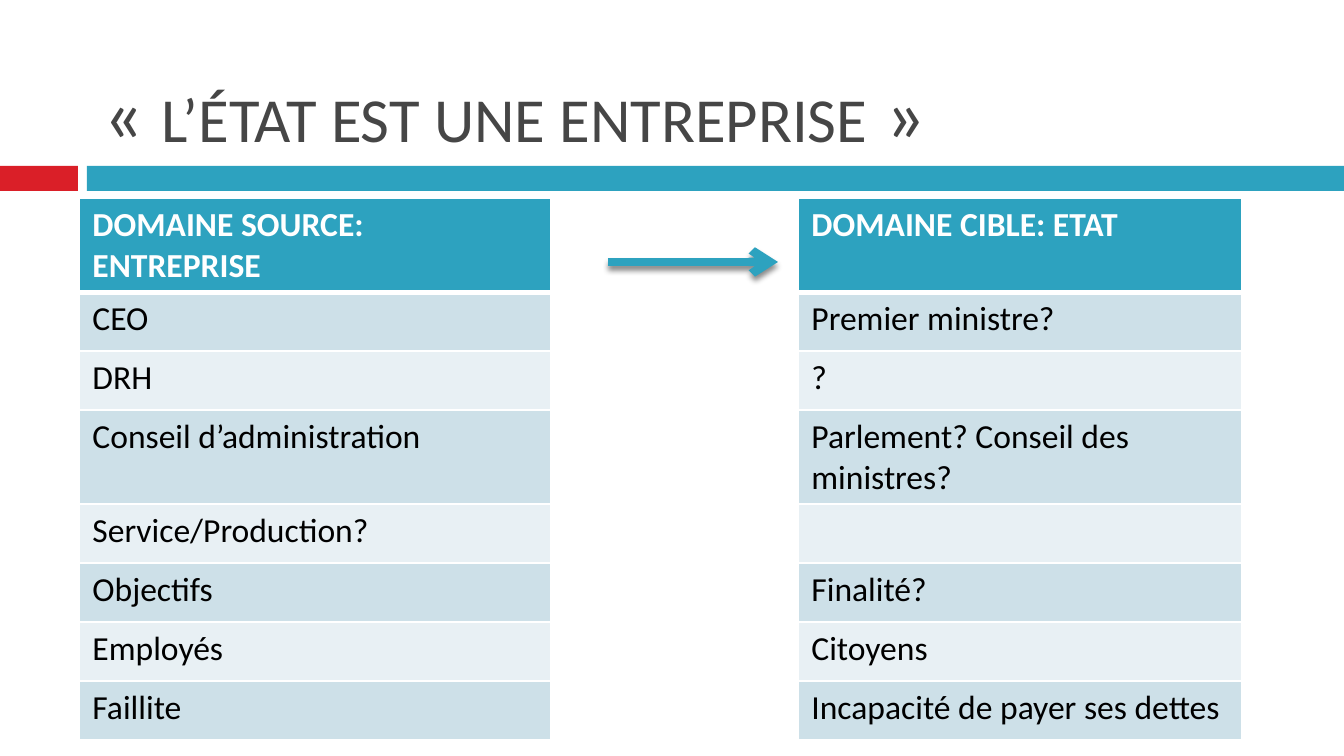
from dataclasses import dataclass

from lxml.etree import SubElement
from pptx import Presentation
from pptx.dml.color import RGBColor
from pptx.enum.shapes import MSO_CONNECTOR, MSO_SHAPE
from pptx.enum.text import MSO_ANCHOR
from pptx.oxml.ns import qn
from pptx.util import Emu, Pt

PX = 914400 / 134.4
COLORS = {
    "red": "DA1F28",
    "teal": "2DA2BF",
    "title": "464646",
    "white": "FFFFFF",
    "black": "000000",
    "band_dark": "CDE0E8",
    "band_light": "E8F0F4",
}


@dataclass(frozen=True)
class Bar:
    left: int
    width: int
    color: str


@dataclass(frozen=True)
class Mapping:
    source: str
    target: str
    height: int = 59


BARS = [Bar(0, 78, "red"), Bar(87, 1257, "teal")]
COLUMNS = [472, 247, 444]
MAPPINGS = [
    Mapping("DOMAINE SOURCE: ENTREPRISE", "DOMAINE CIBLE: ETAT", 94),
    Mapping("CEO", "Premier ministre?"),
    Mapping("DRH", "?"),
    Mapping("Conseil d’administration", "Parlement? Conseil des ministres?", 94),
    Mapping("Service/Production?", ""),
    Mapping("Objectifs", "Finalité?"),
    Mapping("Employés", "Citoyens"),
    Mapping("Faillite", "Incapacité de payer ses dettes"),
]


def px(length: int) -> Emu:
    return Emu(round(length * PX))


def rgb(name: str) -> RGBColor:
    return RGBColor.from_string(COLORS[name])


def add_text(para, text: str, *, size: int = 18, color: str = "black",
             bold: bool = False, small_caps: bool = False) -> None:
    span = para.add_run()
    span.text = text
    span.font.name = "Calibri"
    span.font.size = Pt(size)
    span.font.bold = bold
    span.font.color.rgb = rgb(color)
    if small_caps:
        span.font._element.set("cap", "small")


def draw_bar(page, bar: Bar) -> None:
    box = page.shapes.add_shape(MSO_SHAPE.RECTANGLE, px(bar.left), px(166), px(bar.width), px(25))
    box.shadow.inherit = False
    box.fill.solid()
    box.fill.fore_color.rgb = rgb(bar.color)
    box.line.fill.background()


def draw_title(page) -> None:
    box = page.shapes.add_textbox(px(90), px(17), px(1198), px(148))
    frame = box.text_frame
    frame.word_wrap = True
    frame.vertical_anchor = MSO_ANCHOR.BOTTOM
    para = frame.paragraphs[0]
    add_text(para, "« ", size=42, color="title")
    add_text(para, "l’état est une entreprise", size=42, color="title", small_caps=True)
    add_text(para, " »", size=42, color="title")


def set_borders(cell, bottom: int) -> None:
    properties = cell._tc.get_or_add_tcPr()
    widths = {"lnL": 1, "lnR": 1, "lnT": 1, "lnB": bottom}
    for position, (side, width) in enumerate(widths.items()):
        line = SubElement(properties, qn(f"a:{side}"), w=str(Pt(width)))
        fill = SubElement(line, qn("a:solidFill"))
        SubElement(fill, qn("a:srgbClr"), val=COLORS["white"])
        properties.insert(position, line)


def draw_table(page, mappings: list[Mapping]) -> None:
    height = sum(mapping.height for mapping in mappings)
    table = page.shapes.add_table(
        len(mappings), len(COLUMNS), px(79), px(198), px(sum(COLUMNS)), px(height)
    ).table
    for column, width in zip(table.columns, COLUMNS):
        column.width = px(width)
    for index, mapping in enumerate(mappings):
        header = index == 0
        band = "teal" if header else "band_dark" if index % 2 else "band_light"
        table.rows[index].height = px(mapping.height)
        for column, text in enumerate((mapping.source, "", mapping.target)):
            cell = table.cell(index, column)
            if column == 1:
                cell.fill.background()
            else:
                cell.fill.solid()
                cell.fill.fore_color.rgb = rgb(band)
            set_borders(cell, bottom=3 if header else 1)
            if text:
                add_text(cell.text_frame.paragraphs[0], text,
                         color="white" if header else "black", bold=header)


def draw_arrow(page) -> None:
    arrow = page.shapes.add_connector(MSO_CONNECTOR.STRAIGHT, px(608), px(262), px(778), px(262))
    arrow.line.color.rgb = rgb("teal")
    arrow.line.width = Pt(4.5)
    SubElement(arrow.line._get_or_add_ln(), qn("a:tailEnd"), type="arrow")
    effects = SubElement(arrow._element.spPr, qn("a:effectLst"))
    shadow = SubElement(effects, qn("a:outerShdw"), blurRad=str(Pt(3)), dist=str(Pt(2.4)),
                        dir="5400000", rotWithShape="0")
    color = SubElement(shadow, qn("a:srgbClr"), val=COLORS["black"])
    SubElement(color, qn("a:alpha"), val="45000")


def main() -> None:
    deck = Presentation()
    deck.slide_width, deck.slide_height = px(1344), px(756)
    page = deck.slides.add_slide(deck.slide_layouts[6])
    for bar in BARS:
        draw_bar(page, bar)
    draw_title(page)
    draw_table(page, MAPPINGS)
    draw_arrow(page)
    deck.save("out.pptx")


if __name__ == "__main__":
    main()
